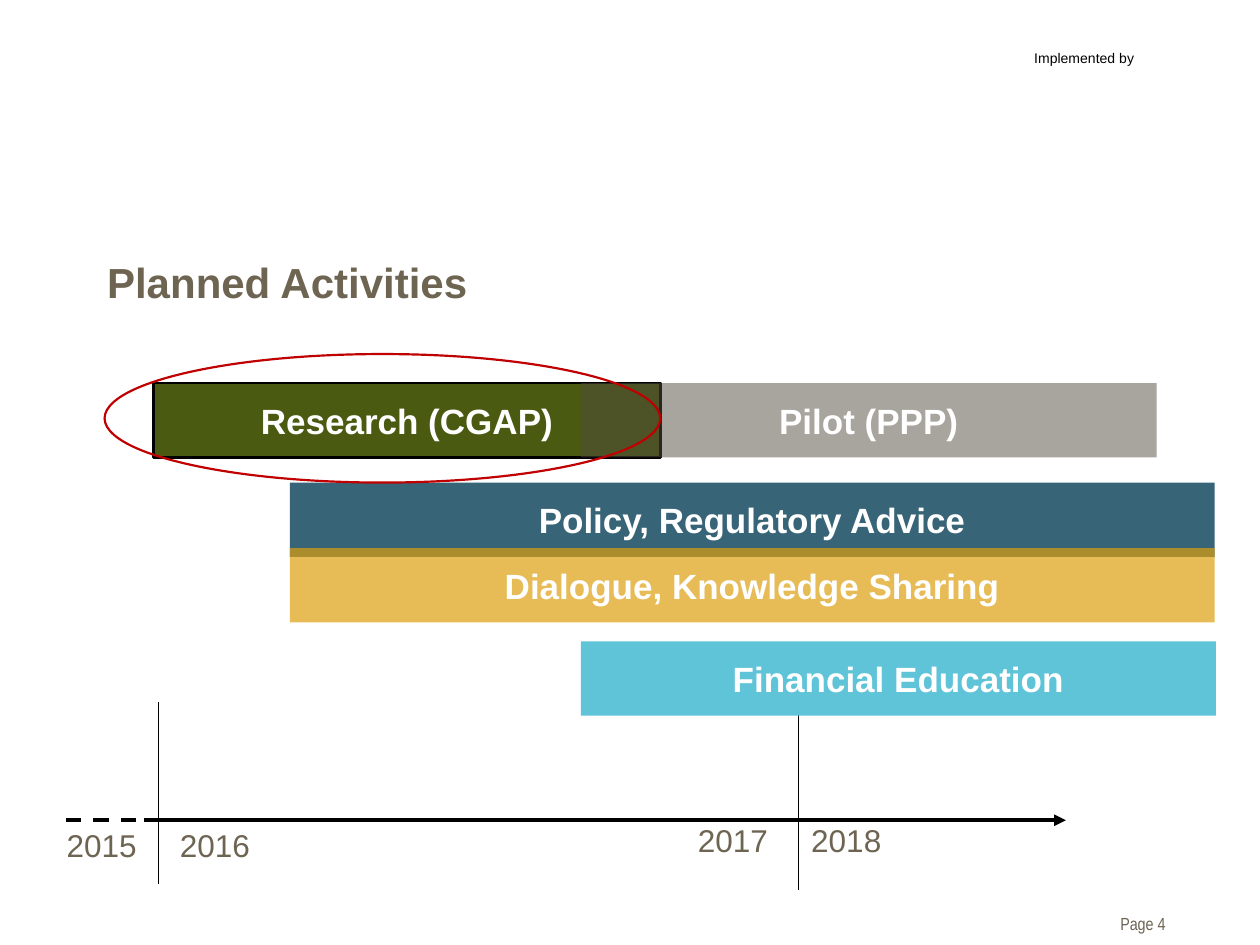
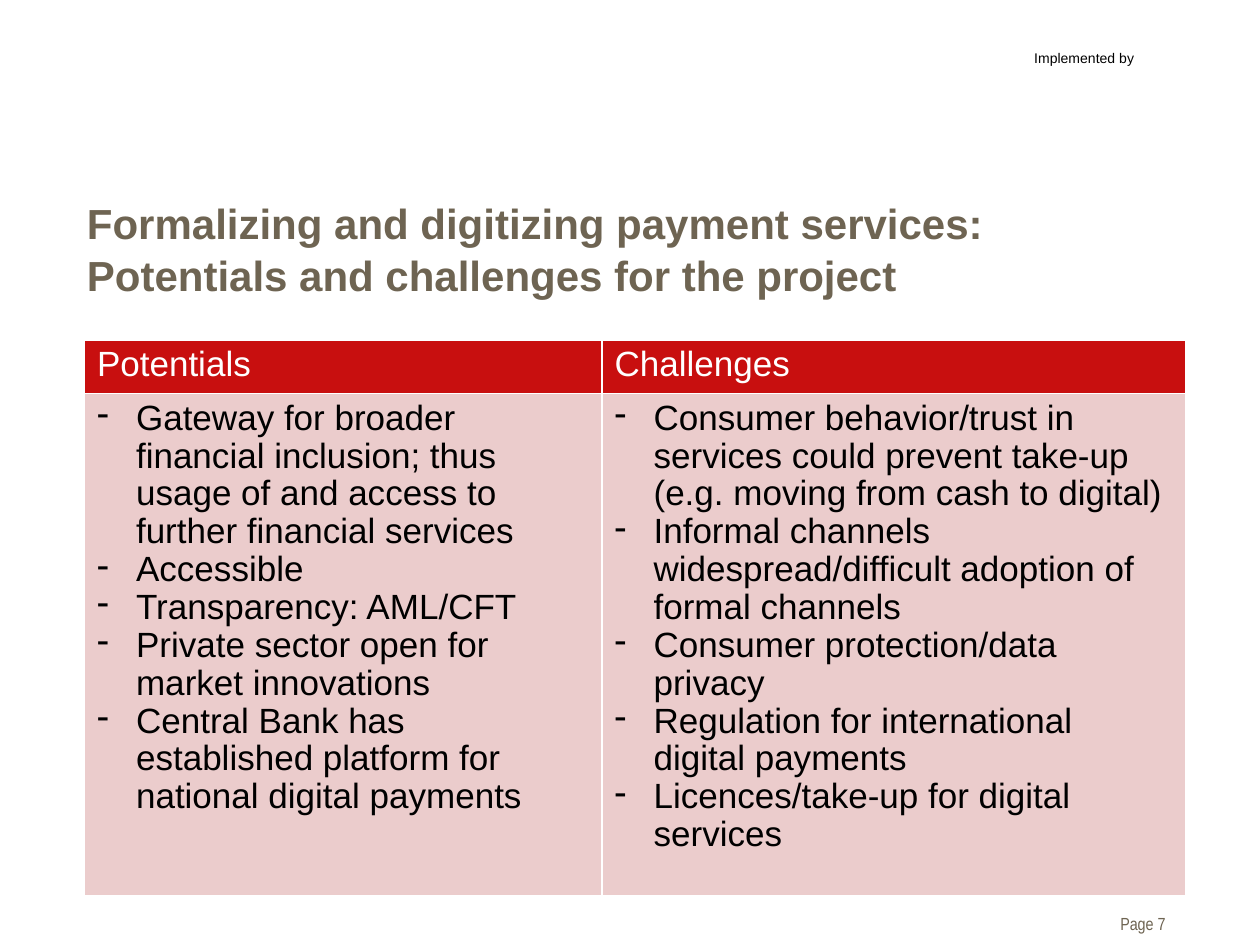
from dataclasses import dataclass

from lxml import etree
from pptx import Presentation
from pptx.dml.color import RGBColor
from pptx.enum.dml import MSO_LINE
from pptx.enum.shapes import MSO_CONNECTOR, MSO_SHAPE
from pptx.enum.text import MSO_ANCHOR, MSO_AUTO_SIZE, PP_ALIGN
from pptx.oxml.ns import qn
from pptx.util import Inches, Pt

STRAIGHT = MSO_CONNECTOR.STRAIGHT
RECTANGLE, OVAL = MSO_SHAPE.RECTANGLE, MSO_SHAPE.OVAL
DASH = MSO_LINE.DASH
TOP, MIDDLE = MSO_ANCHOR.TOP, MSO_ANCHOR.MIDDLE
LEFT, CENTER, RIGHT = PP_ALIGN.LEFT, PP_ALIGN.CENTER, PP_ALIGN.RIGHT

WHITE = RGBColor(0xFF, 0xFF, 0xFF)
BLACK = RGBColor(0x00, 0x00, 0x00)
TAUPE = RGBColor(0x6E, 0x64, 0x52)
OLIVE = RGBColor(0x4A, 0x5A, 0x11)
TEAL = RGBColor(0x38, 0x64, 0x77)
AMBER = RGBColor(0xDE, 0x9F, 0x0F)
DARK_TAUPE = RGBColor(0x52, 0x4B, 0x3E)
SKY = RGBColor(0x60, 0xC4, 0xD9)
HIGHLIGHT_RED = RGBColor(0xC0, 0x00, 0x00)
HEADER_RED = RGBColor(0xC8, 0x0F, 0x0F)
PALE_RED = RGBColor(0xEB, 0xCC, 0xCC)

FONT = "Arial"
NARROW_FONT = "Arial Narrow"
COLUMNS, ROWS = 100, 75
CELL = Inches(0.1)


@dataclass
class Box:
    """A region measured in columns and rows of the slide grid."""
    left: float
    top: float
    width: float
    height: float

    def area(self, left, top, width, height):
        return Box(self.left + left, self.top + top, width, height)

    def emu(self):
        return [round(value * CELL)
                for value in (self.left, self.top, self.width, self.height)]


SLIDE = Box(0, 0, COLUMNS, ROWS)


def style(paragraph, size, color, bold=False, name=FONT, alignment=LEFT):
    paragraph.alignment = alignment
    font = paragraph.font
    font.name, font.size, font.bold = name, Pt(size), bold
    font.color.rgb = color


def add_text(slide, box, text, size, color, name=FONT, alignment=LEFT, tab=None):
    frame = slide.shapes.add_textbox(*box.emu()).text_frame
    frame.word_wrap = True
    frame.text = text
    paragraph = frame.paragraphs[0]
    if tab:
        tabs = etree.SubElement(paragraph._p.get_or_add_pPr(), qn("a:tabLst"))
        etree.SubElement(tabs, qn("a:tab"), pos=str(round(tab * CELL)), algn="l")
    style(paragraph, size, color, name=name, alignment=alignment)
    return frame


def add_title_slide(presentation, title, title_box, page):
    """Add a slide with the title, header and page number that all slides share."""
    slide = presentation.slides.add_slide(presentation.slide_layouts[5])
    placeholder = slide.shapes.title
    placeholder.left, placeholder.top, placeholder.width, placeholder.height = title_box.emu()
    frame = placeholder.text_frame
    frame.text = title
    frame.word_wrap = True
    frame.auto_size = MSO_AUTO_SIZE.NONE
    frame.vertical_anchor = TOP
    frame.paragraphs[0].line_spacing = 1.04
    style(frame.paragraphs[0], 24, TAUPE, bold=True)

    add_text(slide, SLIDE.area(81.1, 3.4, 11.7, 2.4), "Implemented by", 8, BLACK)
    footer = add_text(slide, SLIDE.area(82.4, 72, 10.1, 2.7), f"Page {page}", 10,
                      TAUPE, NARROW_FONT, RIGHT)
    footer.margin_right = 0
    return slide


def add_line(slide, box, width, dash=None, arrow=False):
    """Draw a line from the box's top left to its bottom right corner."""
    left, top, across, down = box.emu()
    line = slide.shapes.add_connector(STRAIGHT, left, top, left + across, top + down)
    line.line.color.rgb = BLACK
    line.line.width = Pt(width)
    if dash:
        line.line.dash_style = dash
    if arrow:
        outline = line._element.spPr.find(qn("a:ln"))
        etree.SubElement(outline, qn("a:tailEnd"), type="triangle")
    etree.SubElement(line._element.spPr, qn("a:effectLst"))


def add_bar(slide, box, label, color, opacity=100, outlined=False):
    bar = slide.shapes.add_shape(RECTANGLE, *box.emu())
    bar.shadow.inherit = False
    bar.fill.solid()
    bar.fill.fore_color.rgb = color
    if opacity < 100:
        color_element = bar._element.spPr.find(qn("a:solidFill"))[0]
        etree.SubElement(color_element, qn("a:alpha"), val=str(opacity * 1000))
    if outlined:
        bar.line.color.rgb = BLACK
        bar.line.width = Pt(1.5)
    else:
        bar.line.fill.background()
    frame = bar.text_frame
    frame.text = label
    frame.vertical_anchor = MIDDLE
    style(frame.paragraphs[0], 20, WHITE, bold=True, alignment=CENTER)


def add_activity_bars(slide, box):
    bar_height = 5.9
    bars = [
        (3.9, 2.3, 40.2, "Research (CGAP)", OLIVE, 100, True),
        (14.7, 10.2, 73.4, "Policy, Regulatory Advice", TEAL, 100, False),
        (14.7, 15.4, 73.4, "Dialogue, Knowledge Sharing", AMBER, 70, False),
        (37.8, 2.3, 45.7, "Pilot (PPP)", DARK_TAUPE, 50, False),
        (37.8, 22.8, 50.4, "Financial Education", SKY, 100, False),
    ]
    for left, top, width, label, color, opacity, outlined in bars:
        add_bar(slide, box.area(left, top, width, bar_height), label, color,
                opacity, outlined)


def add_highlight(slide, box):
    ellipse = slide.shapes.add_shape(OVAL, *box.emu())
    ellipse.shadow.inherit = False
    ellipse.fill.background()
    ellipse.line.color.rgb = HIGHLIGHT_RED
    ellipse.line.width = Pt(1.25)


def add_time_axis(slide, box):
    axis = 9.4
    add_line(slide, box.area(59.1, 0.4, 0, 14.5), 0.75)
    add_line(slide, box.area(7.1, axis, 73.2, 0), 2.25, arrow=True)
    add_line(slide, box.area(17.4, axis, -17.4, 0), 2.25, dash=DASH)
    add_line(slide, box.area(8.3, 0, 0, 14.5), 0.75)
    for left, top, years in ((0, axis, "2015\t2016"), (50.1, axis - 0.4, "2017\t2018")):
        add_text(slide, box.area(left, top, 17.3, 4), years, 18, TAUPE, tab=9)


def add_activities_slide(presentation):
    slide = add_title_slide(presentation, "Planned Activities",
                            SLIDE.area(7.5, 19.7, 85, 6.8), 4)
    add_time_axis(slide, SLIDE.area(4.3, 55.7, 80.3, 14.9))
    chart = SLIDE.area(8.3, 28.1, 88.2, 28.7)
    add_activity_bars(slide, chart)
    add_highlight(slide, chart.area(0, 0, 44.1, 10.2))


def set_borders(cell, color, width):
    properties = cell._tc.get_or_add_tcPr()
    for index, side in enumerate(("lnL", "lnR", "lnT", "lnB")):
        line = etree.Element(qn(f"a:{side}"), w=str(Pt(width)))
        fill = etree.SubElement(line, qn("a:solidFill"))
        etree.SubElement(fill, qn("a:srgbClr"), val=str(color))
        properties.insert(index, line)


def add_dash_bullet(paragraph):
    properties = paragraph._p.get_or_add_pPr()
    indent = Inches(0.31)
    properties.set("marL", str(indent))
    properties.set("indent", str(-indent))
    etree.SubElement(properties, qn("a:buChar"), char="-")


def fill_cell(cell, lines, fill, color, bulleted):
    cell.fill.solid()
    cell.fill.fore_color.rgb = fill
    set_borders(cell, WHITE, 1)
    cell.text = "\n".join(lines)
    for paragraph in cell.text_frame.paragraphs:
        paragraph.line_spacing = 0.97
        if bulleted:
            add_dash_bullet(paragraph)
        style(paragraph, 20, color)


def add_comparison_table(slide, box, comparison):
    table = slide.shapes.add_table(2, len(comparison), *box.emu()).table
    table.first_row = table.horz_banding = False
    header_height = 4
    for row, height in zip(table.rows, (header_height, box.height - header_height)):
        row.height = round(height * CELL)
    for index, (heading, points) in enumerate(comparison.items()):
        share = (0.47, 0.53)[index]
        table.columns[index].width = round(box.width * share * CELL)
        fill_cell(table.cell(0, index), [heading], HEADER_RED, WHITE, False)
        fill_cell(table.cell(1, index), points, PALE_RED, BLACK, True)


def add_comparison_slide(presentation):
    title = ("Formalizing and digitizing payment services: "
             "Potentials and challenges for the project")
    slide = add_title_slide(presentation, title, SLIDE.area(5.9, 15, 88, 6.8), 7)
    add_comparison_table(slide, SLIDE.area(6.7, 27, 87.4, 42.1), {
        "Potentials": [
            "Gateway for broader financial inclusion; thus usage of and access to "
            "further financial services",
            "Accessible",
            "Transparency: AML/CFT",
            "Private sector open for market innovations",
            "Central Bank has established platform for national digital payments",
        ],
        "Challenges": [
            "Consumer behavior/trust in services could prevent take-up "
            "(e.g. moving from cash to digital)",
            "Informal channels widespread/difficult adoption of formal channels",
            "Consumer protection/data privacy",
            "Regulation for international digital payments",
            "Licences/take-up for digital services",
        ],
    })


def main():
    presentation = Presentation()
    presentation.slide_width = COLUMNS * CELL
    presentation.slide_height = ROWS * CELL
    add_activities_slide(presentation)
    add_comparison_slide(presentation)
    presentation.save("out.pptx")


if __name__ == "__main__":
    main()
